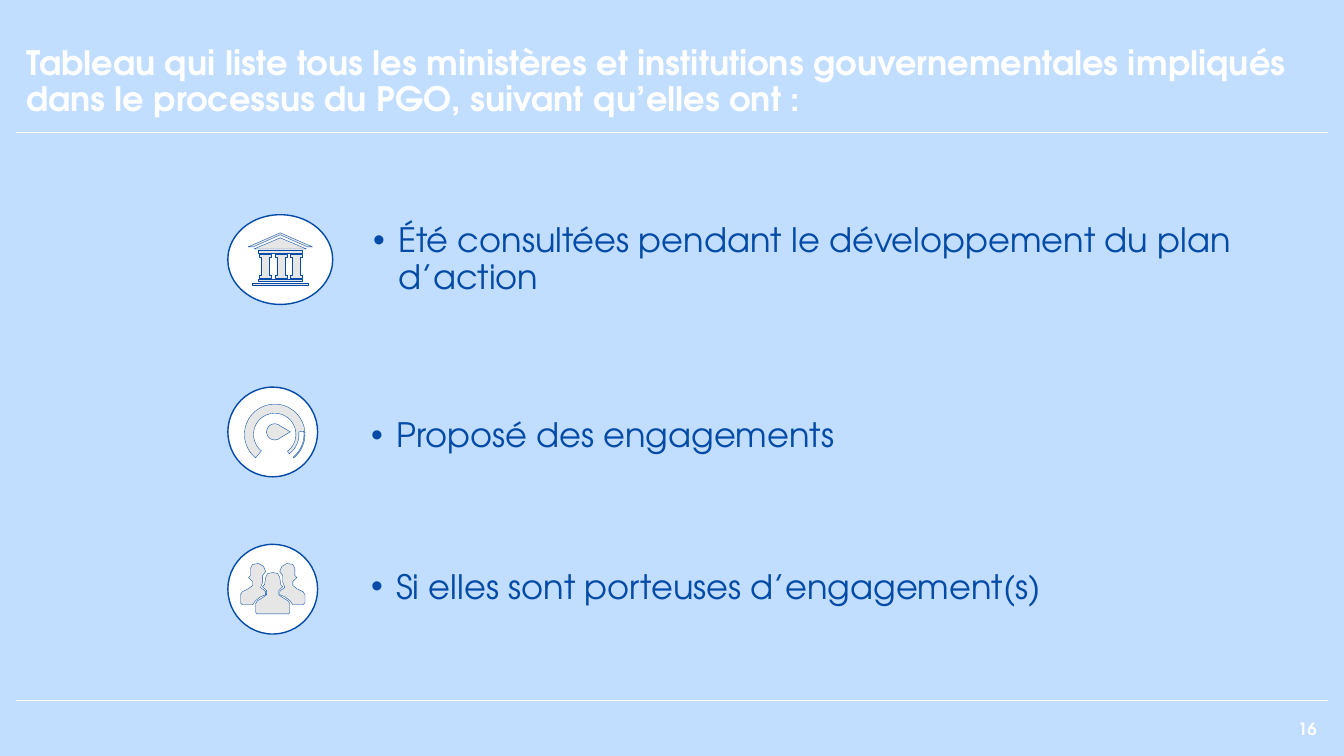
"""Build the slide listing how ministries and institutions take part in the PGO process."""
from math import cos, radians, sin

from lxml.etree import SubElement
from pptx import Presentation
from pptx.dml.color import RGBColor
from pptx.enum.shapes import MSO_CONNECTOR, MSO_SHAPE
from pptx.enum.text import MSO_ANCHOR, MSO_AUTO_SIZE, PP_ALIGN
from pptx.oxml.ns import qn
from pptx.util import Inches, Pt

TITLE = ("Tableau qui liste tous les ministères et institutions gouvernementales "
         "impliqués dans le processus du PGO, suivant qu’elles ont :")
PAGE = "16"
ITEMS = [
    {"text": "Été consultées pendant le développement du plan d’action",
     "box": (3.6, 1.85, 8.97, 1.46), "disc": (2.26, 2.13, 1.04, 0.89), "icon": "bank"},
    {"text": "Proposé des engagements",
     "box": (3.58, 3.62, 8.99, 1.42), "disc": (2.26, 3.84, 0.89, 0.89), "icon": "gauge"},
    {"text": "Si elles sont porteuses d’engagement(s)",
     "box": (3.58, 5.26, 7.67, 1.15), "disc": (2.26, 5.4, 0.89, 0.89), "icon": "people"},
]
WIDTH, HEIGHT, MARGIN = 13.33, 7.5, 0.16
RULES = (1.31, 6.95)
TITLE_BOX = (MARGIN, 0.38, WIDTH - 2 * MARGIN, 0.88)
PAGE_BOX = (10.16, 7.03, 3, 0.4)

THEME = {
    "font": "TeX Gyre Adventor",
    "sky": RGBColor.from_string("C1DDFF"),
    "white": RGBColor.from_string("FFFFFF"),
    "blue": RGBColor.from_string("034BA6"),
    "grey": RGBColor.from_string("E7E6E6"),
    "text": 24, "page": 12,
    "rule": 0.75, "disc": 1, "icon": 0.25,
}

COLUMN = [(0, 0), (0.12, 0), (0.12, 0.03), (0.1, 0.03), (0.1, 0.21), (0.12, 0.21),
          (0.12, 0.24), (0, 0.24), (0, 0.21), (0.02, 0.21), (0.02, 0.03), (0, 0.03)]
HALF_FRONT = [(0, 5.68), (0.05, 5.69), (0.07, 5.73), (0.08, 5.8), (0.1, 5.82), (0.08, 5.84),
              (0.06, 5.86), (0.06, 5.9), (0.1, 5.93), (0.15, 5.96), (0.17, 5.99),
              (0.17, 6.07), (0.16, 6.09)]
SIDE = [(0.14, 5.59), (0.2, 5.6), (0.22, 5.64), (0.22, 5.71), (0.24, 5.73), (0.22, 5.75),
        (0.2, 5.77), (0.2, 5.81), (0.24, 5.84), (0.3, 5.87), (0.32, 5.9), (0.32, 5.98),
        (0.3, 6), (0.2, 6), (0.17, 5.96), (0.12, 5.92), (0.07, 5.9), (0.07, 5.87),
        (0.09, 5.85), (0.12, 5.83), (0.11, 5.8), (0.1, 5.78), (0.1, 5.71), (0.07, 5.67),
        (0.09, 5.62)]


def arc(cx, cy, radius, start, end, steps=48):
    angles = [radians(start + (end - start) * i / steps) for i in range(steps + 1)]
    return [(cx + radius * cos(a), cy + radius * sin(a)) for a in angles]


def bar(x, y, w, h):
    return [(x, y), (x + w, y), (x + w, y + h), (x, y + h)]


def bank():
    steps = [bar(2.5, 2.81, 0.56, 0.02), bar(2.56, 2.77, 0.44, 0.02),
             bar(2.56, 2.48, 0.44, 0.03)]
    columns = [[(2.57 + 0.155 * i + x, 2.52 + y) for x, y in COLUMN] for i in range(3)]
    gable = [(2.78, 2.36), (3.04, 2.47), (2.52, 2.47)]
    roof = [(2.78, 2.31), (3.1, 2.45), (3.05, 2.45), (2.78, 2.33), (2.51, 2.45), (2.46, 2.45)]
    return steps + columns + [gable, roof]


def gauge():
    cx, cy = 2.725, 4.31
    bands = [(0.3, -231, 51), (0.29, 51, -6), (0.24, -6, 53), (0.21, 53, -231)]
    dial = [pt for band in bands for pt in arc(cx, cy, *band)]
    needle = arc(cx, 4.285, 0.08, 50, 310) + [(2.88, 4.285)]
    return [dial, needle]


def people():
    cx = 2.705
    front = HALF_FRONT + [(-x, y) for x, y in reversed(HALF_FRONT)]
    left = [(-x, y) for x, y in SIDE]
    return [[(cx + x, y) for x, y in outline] for outline in (front, left, SIDE)]


ICONS = {"bank": bank, "gauge": gauge, "people": people}


def paint(sp, fill, width):
    sp.shadow.inherit = False
    sp.fill.solid()
    sp.fill.fore_color.rgb = fill
    sp.line.color.rgb = THEME["blue"]
    sp.line.width = Pt(width)


def draw_icon(s, outlines):
    first, *rest = [[(x * 1000, y * 1000) for x, y in o] for o in outlines]
    builder = s.shapes.build_freeform(*first[0], scale=914.4)
    builder.add_line_segments(first[1:], close=True)
    for outline in rest:
        builder.move_to(*outline[0])
        builder.add_line_segments(outline[1:], close=True)
    paint(builder.convert_to_shape(), THEME["grey"], THEME["icon"])


def write(sp, box, text, size, color, bold, **para):
    for name, value in zip(("left", "top", "width", "height"), box):
        setattr(sp, name, Inches(value))
    tf = sp.text_frame
    frame = {"word_wrap": True, "auto_size": MSO_AUTO_SIZE.NONE,
             "vertical_anchor": MSO_ANCHOR.MIDDLE}
    for name, value in frame.items():
        setattr(tf, name, value)
    p = tf.paragraphs[0]
    for name, value in para.items():
        setattr(p, name, value)
    r = p.add_run()
    r.text = text
    for name, value in {"name": THEME["font"], "size": Pt(size), "bold": bold}.items():
        setattr(r.font, name, value)
    r.font.color.rgb = color
    return p


def add_bullet(p):
    pPr = p._p.get_or_add_pPr()
    pPr.set("marL", str(Inches(0.25)))
    pPr.set("indent", str(-Inches(0.25)))
    SubElement(pPr, qn("a:buFont")).set("typeface", "Arial")
    SubElement(pPr, qn("a:buChar")).set("char", "•")


def main():
    prs = Presentation()
    prs.slide_width, prs.slide_height = Inches(WIDTH), Inches(HEIGHT)
    s = prs.slides.add_slide(prs.slide_layouts.get_by_name("Comparison"))
    s.background.fill.solid()
    s.background.fill.fore_color.rgb = THEME["sky"]

    for y in RULES:
        line = s.shapes.add_connector(MSO_CONNECTOR.STRAIGHT, Inches(MARGIN), Inches(y),
                                      Inches(WIDTH - MARGIN), Inches(y))
        line.line.color.rgb = THEME["white"]
        line.line.width = Pt(THEME["rule"])
        SubElement(line._element.spPr, qn("a:effectLst"))

    title, *bodies, spare = list(s.placeholders)
    spare._element.getparent().remove(spare._element)
    write(title, TITLE_BOX, TITLE, THEME["text"], THEME["white"], True,
          alignment=PP_ALIGN.LEFT, line_spacing=0.9)
    write(s.shapes.add_textbox(0, 0, 0, 0), PAGE_BOX, PAGE, THEME["page"], THEME["white"],
          True, alignment=PP_ALIGN.RIGHT)

    for body, item in zip(bodies, ITEMS):
        p = write(body, item["box"], item["text"], THEME["text"], THEME["blue"], False,
                  alignment=PP_ALIGN.LEFT, line_spacing=0.9, space_before=Pt(10))
        add_bullet(p)
        disc = s.shapes.add_shape(MSO_SHAPE.OVAL, *map(Inches, item["disc"]))
        paint(disc, THEME["white"], THEME["disc"])
        draw_icon(s, ICONS[item["icon"]]())

    prs.save("out.pptx")


if __name__ == "__main__":
    main()
